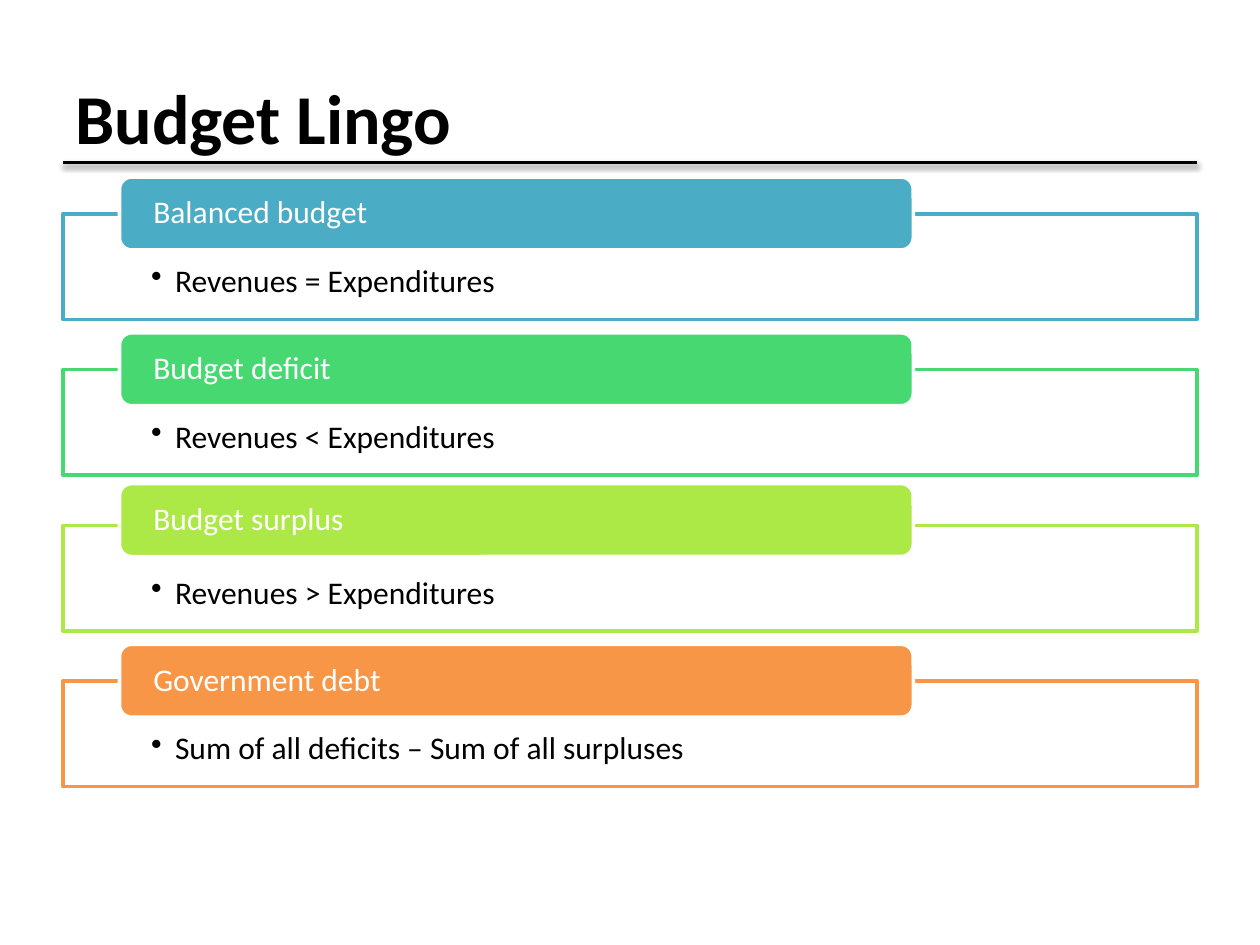
from dataclasses import dataclass

from lxml import etree
from pptx import Presentation
from pptx.dml.color import RGBColor
from pptx.enum.shapes import MSO_CONNECTOR, MSO_SHAPE
from pptx.enum.text import MSO_ANCHOR, PP_ALIGN
from pptx.oxml.ns import qn
from pptx.util import Cm, Pt


@dataclass(frozen=True)
class Theme:
    font: str = "Calibri"
    ink: str = "000000"
    paper: str = "FFFFFF"
    teal: str = "4BACC6"
    green: str = "47D872"
    lime: str = "ACE946"
    orange: str = "F79646"
    title_size: int = 40
    body_size: int = 18
    stroke: int = 2


def write(shape, text, *, font, size, color, bold=False, bullet=False,
          anchor=MSO_ANCHOR.TOP, insets=(0.25, 0.13, 0.25, 0.13), spacing=1.0):
    frame = shape.text_frame
    frame.word_wrap = True
    frame.vertical_anchor = anchor
    (frame.margin_left, frame.margin_top,
     frame.margin_right, frame.margin_bottom) = map(Cm, insets)
    paragraph = frame.paragraphs[0]
    paragraph.text = text
    paragraph.alignment = PP_ALIGN.LEFT
    paragraph.line_spacing = spacing
    if bullet:
        paragraph.level = 1
        properties = paragraph._p.get_or_add_pPr()
        properties.set("marL", str(Cm(0.48)))
        properties.set("indent", str(Cm(-0.48)))
        etree.SubElement(properties, qn("a:buChar"), char="•")
    run_font = paragraph.runs[0].font
    run_font.name = font
    run_font.size = Pt(size)
    run_font.bold = bold
    run_font.color.rgb = RGBColor.from_string(color)


class SlideBuilder:
    """Draws the elements of one slide in a shared theme."""

    def __init__(self, slide, theme):
        self.slide = slide
        self.theme = theme

    def title(self, text, left, top, width, height):
        heading = self.slide.shapes.add_textbox(Cm(left), Cm(top), Cm(width), Cm(height))
        write(heading, text, font=self.theme.font, size=self.theme.title_size,
              color=self.theme.ink, bold=True, anchor=MSO_ANCHOR.MIDDLE)

    def rule(self, left, top, width):
        rule = self.slide.shapes.add_connector(
            MSO_CONNECTOR.STRAIGHT, Cm(left), Cm(top), Cm(left + width), Cm(top))
        rule.line.color.rgb = RGBColor.from_string(self.theme.ink)
        rule.line.width = Pt(self.theme.stroke)
        effects = etree.SubElement(rule._element.spPr, qn("a:effectLst"))
        shadow = etree.SubElement(
            effects, qn("a:outerShdw"), blurRad=str(Pt(3.1)), dist=str(Pt(1.6)),
            dir="5400000", rotWithShape="0")
        shade = etree.SubElement(shadow, qn("a:srgbClr"), val=self.theme.ink)
        etree.SubElement(shade, qn("a:alpha"), val="38000")

    def block(self, preset, left, top, width, height, fill, line):
        block = self.slide.shapes.add_shape(preset, Cm(left), Cm(top), Cm(width), Cm(height))
        block.shadow.inherit = False
        block.fill.solid()
        block.fill.fore_color.rgb = RGBColor.from_string(fill)
        block.line.color.rgb = RGBColor.from_string(line)
        block.line.width = Pt(self.theme.stroke)
        return block

    def definition(self, term, meaning, color, left, top, width, lift):
        theme = self.theme
        panel = self.block(MSO_SHAPE.RECTANGLE, left, top, width, 2.13, theme.paper, color)
        panel_color = panel.fill._xPr.find(qn("a:solidFill"))[0]
        etree.SubElement(panel_color, qn("a:alpha"), val="90000")
        write(panel, meaning, font=theme.font, size=theme.body_size, color=theme.ink,
              bullet=True, insets=(1.78, 1.04, 1.78, 0.36), spacing=0.9)
        tab = self.block(MSO_SHAPE.ROUNDED_RECTANGLE, left + 1.14, top - lift,
                         width * 0.7, 1.47, color, theme.paper)
        write(tab, term, font=theme.font, size=theme.body_size, color=theme.paper,
              anchor=MSO_ANCHOR.MIDDLE, insets=(0.61, 0, 0.61, 0), spacing=0.9)


def main():
    deck = Presentation()
    deck.slide_width, deck.slide_height = Cm(25.4), Cm(19.05)
    theme = Theme()
    builder = SlideBuilder(deck.slides.add_slide(deck.slide_layouts[6]), theme)
    margin, content_width = 1.27, 22.86
    first_top, pitch = 4.31, 3.14
    builder.rule(margin, 3.28, content_width)
    builder.title("Budget Lingo", margin, 0.76, content_width, 3.18)
    definitions = (
        ("Balanced budget", "Revenues = Expenditures", theme.teal, 0.74),
        ("Budget deficit", "Revenues < Expenditures", theme.green, 0.74),
        ("Budget surplus", "Revenues > Expenditures", theme.lime, 0.84),
        ("Government debt", "Sum of all deficits – Sum of all surpluses", theme.orange, 0.74),
    )
    for row, (term, meaning, color, lift) in enumerate(definitions):
        builder.definition(term, meaning, color, margin, first_top + row * pitch,
                           content_width, lift)
    deck.save("out.pptx")


if __name__ == "__main__":
    main()
